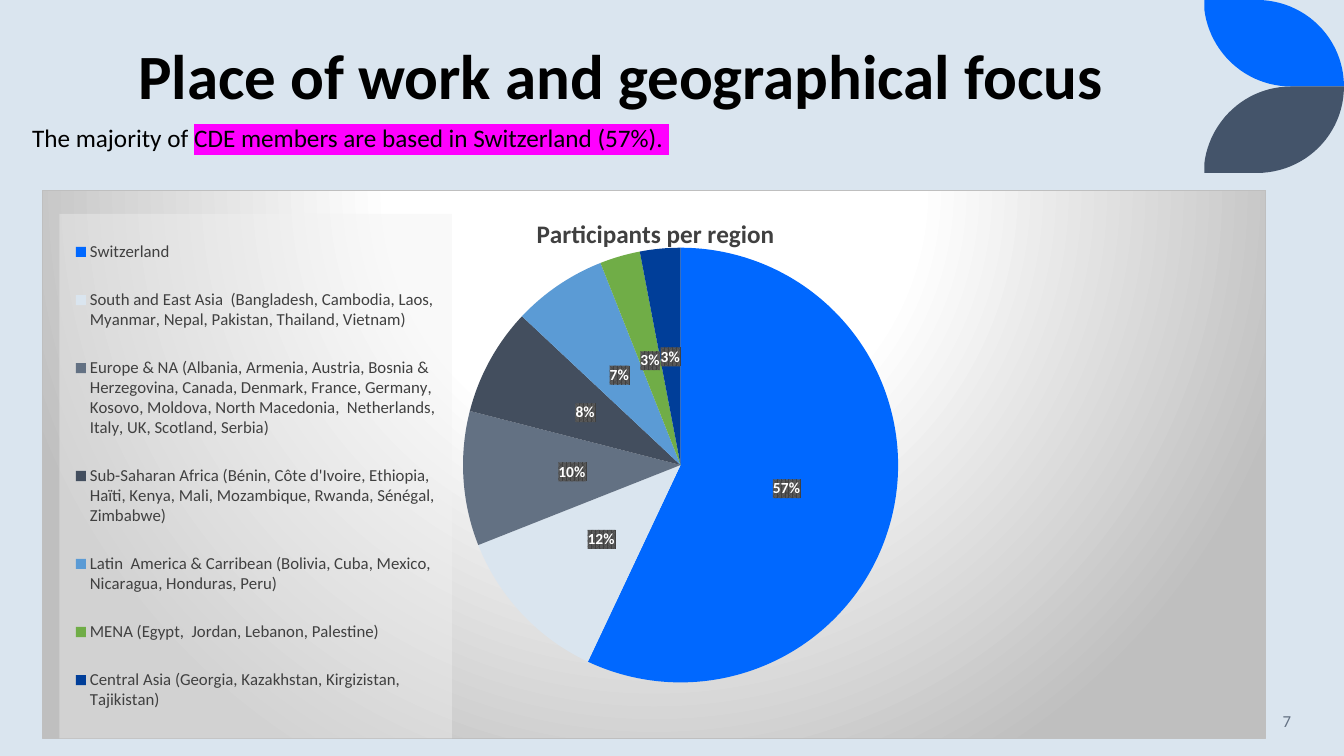
from lxml import etree
from pptx import Presentation
from pptx.chart.data import CategoryChartData
from pptx.dml.color import RGBColor
from pptx.enum import chart as ch, text
from pptx.oxml import parse_xml
from pptx.oxml.ns import nsdecls, qn
from pptx.util import Cm, Pt

FONT = "Calibri"
BLACK = RGBColor(0x00, 0x00, 0x00)
WHITE = RGBColor(0xFF, 0xFF, 0xFF)
PALE = RGBColor(0xDA, 0xE5, 0xEF)
BLUE = RGBColor(0x00, 0x68, 0xFF)
SLATE = RGBColor(0x44, 0x54, 0x6A)
GREY_BLUE = RGBColor(0x63, 0x71, 0x83)
DARK_BLUE_GREY = RGBColor(0x43, 0x4E, 0x5E)
SKY = RGBColor(0x5B, 0x9B, 0xD5)
GREEN = RGBColor(0x70, 0xAD, 0x47)
NAVY = RGBColor(0x00, 0x3E, 0x99)
DARK_GREY = RGBColor(0x40, 0x40, 0x40)
MAGENTA = RGBColor(0xFF, 0x00, 0xFF)

REGIONS = [
    ("Switzerland", 57, BLUE),
    ("South and East Asia  (Bangladesh, Cambodia, Laos, Myanmar, Nepal, "
     "Pakistan, Thailand, Vietnam)", 12, PALE),
    ("Europe & NA (Albania, Armenia, Austria, Bosnia & Herzegovina, Canada, "
     "Denmark, France, Germany, Kosovo, Moldova, North Macedonia,  "
     "Netherlands, Italy, UK, Scotland, Serbia)", 10, GREY_BLUE),
    ("Sub-Saharan Africa (Bénin, Côte d'Ivoire, Ethiopia, Haïti, Kenya, Mali, "
     "Mozambique, Rwanda, Sénégal, Zimbabwe)", 8, DARK_BLUE_GREY),
    ("Latin  America & Carribean (Bolivia, Cuba, Mexico, Nicaragua, Honduras, "
     "Peru)", 7, SKY),
    ("MENA (Egypt,  Jordan, Lebanon, Palestine)", 3, GREEN),
    ("Central Asia (Georgia, Kazakhstan, Kirgizistan, Tajikistan)", 3, NAVY),
]

prs = Presentation()
prs.slide_width, prs.slide_height = Cm(33.87), Cm(19.05)
s = prs.slides.add_slide(prs.slide_layouts[6])
s.background.fill.solid()
s.background.fill.fore_color.rgb = PALE


def add_text(box, runs, size, color, bold=False, anchor=text.MSO_ANCHOR.TOP):
    tf = s.shapes.add_textbox(*(Cm(v) for v in box)).text_frame
    tf.word_wrap = True
    tf.vertical_anchor = anchor
    p = tf.paragraphs[0]
    for words in runs:
        r = p.add_run()
        r.text = words
        r.font.name, r.font.size, r.font.bold = FONT, Pt(size), bold
        r.font.color.rgb = color
    return p


def layout(x, y, w=None, h=None, target=""):
    parts = [("layoutTarget", target)] if target else []
    parts += [("xMode", "edge"), ("yMode", "edge"), ("x", x), ("y", y)]
    parts += [("w", w), ("h", h)] if w else []
    inner = "".join(f'<c:{tag} val="{val}"/>' for tag, val in parts)
    return parse_xml(f'<c:layout {nsdecls("c")}><c:manualLayout>{inner}'
                     '</c:manualLayout></c:layout>')


# Corner leaves: the lower one mirrors the upper one
CURVES = [
    [(31.67, 0), (32.89, 0), (33.87, 0.97), (33.87, 2.18)],
    [(32.54, 2.18), (31.4, 2.18), (30.48, 1.32), (30.35, 0.23)],
]
STEPS = 24
outline = [(30.35, 0)]
for a, b, c, d in CURVES:
    for i in range(STEPS + 1):
        t = i / STEPS
        weights = ((1 - t) ** 3, 3 * t * (1 - t) ** 2, 3 * t * t * (1 - t), t ** 3)
        outline.append(tuple(sum(w * pt[k] for w, pt in zip(weights, (a, b, c, d)))
                             for k in (0, 1)))
for color, base, sign in ((BLUE, 0, 1), (SLATE, 4.36, -1)):
    points = [(Cm(x), Cm(base + sign * y)) for x, y in outline]
    builder = s.shapes.build_freeform(*points[0])
    builder.add_line_segments(points[1:], close=True)
    sp = builder.convert_to_shape()
    sp.shadow.inherit = False
    sp.fill.solid()
    sp.fill.fore_color.rgb = color
    sp.line.fill.background()

# Title and page number
p = add_text((3.23, -1.4, 27.15, 4.37), ["Place of work and geographical focus"],
             45, BLACK, True, text.MSO_ANCHOR.BOTTOM)
p.line_spacing = 0.9
p = add_text((28.19, 17.65, 4.6, 1.02), ["7"], 12, GREY_BLUE,
             anchor=text.MSO_ANCHOR.MIDDLE)
p.alignment = text.PP_ALIGN.RIGHT

# Pie chart
data = CategoryChartData()
data.categories = [name for name, _, _ in REGIONS]
data.add_series("Series 1", [value for _, value, _ in REGIONS])
chart = s.shapes.add_chart(ch.XL_CHART_TYPE.PIE, Cm(1.07), Cm(4.78), Cm(30.84),
                           Cm(13.84), data).chart
chart.font.name, chart.font.size = FONT, Pt(10)
chart.font.color.rgb = BLACK
plot = chart.plots[0]
plot.vary_by_categories = True
series = plot.series[0]
for i, (_, _, color) in enumerate(REGIONS):
    fill = series.points[i].format.fill
    fill.solid()
    fill.fore_color.rgb = color

# Chart title
r = chart.chart_title.text_frame.paragraphs[0].add_run()
r.text = "Participants per region"
r.font.name, r.font.size, r.font.bold = FONT, Pt(18), True
r.font.color.rgb = DARK_GREY

# Percent labels on a hatched ground
labels = series.data_labels
labels.show_percentage, labels.show_value = True, False
labels.number_format, labels.number_format_is_linked = "0%", False
labels.position = ch.XL_LABEL_POSITION.CENTER
labels.font.name, labels.font.size, labels.font.bold = FONT, Pt(11), True
labels.font.color.rgb = WHITE
labels_xml = series.format and chart.element.find(".//" + qn("c:dLbls"))
labels_xml.find(qn("c:txPr")).addprevious(parse_xml(
    f'<c:spPr {nsdecls("c", "a")}><a:pattFill prst="pct75">'
    f'<a:fgClr><a:srgbClr val="{DARK_GREY}"/></a:fgClr>'
    '<a:bgClr><a:srgbClr val="595959"/></a:bgClr></a:pattFill></c:spPr>'))

# Legend on a translucent panel
chart.has_legend = True
legend = chart.legend
legend.position = ch.XL_LEGEND_POSITION.RIGHT
legend.include_in_layout = False
legend.font.name, legend.font.size = FONT, Pt(12)
legend.font.color.rgb = DARK_GREY
chart_xml = chart.element.find(qn("c:chart"))
legend_xml = chart_xml.find(qn("c:legend"))
legend_xml.find(qn("c:txPr")).addprevious(parse_xml(
    f'<c:spPr {nsdecls("c", "a")}><a:solidFill><a:srgbClr val="F2F2F2">'
    '<a:alpha val="39000"/></a:srgbClr></a:solidFill></c:spPr>'))

# Places of the title, pie and legend inside the chart
title_xml, plot_xml = (chart_xml.find(qn(tag)) for tag in ("c:title", "c:plotArea"))
for parent in (title_xml, plot_xml, legend_xml):
    for old in parent.findall(qn("c:layout")):
        parent.remove(old)
title_xml.find(qn("c:tx")).addnext(layout(0.4, 0.04))
plot_xml.insert(0, layout(0.215, 0.105, 0.613, 0.793, "inner"))
legend_xml.find(qn("c:legendPos")).addnext(layout(0.0135, 0.043, 0.321, 0.957))

# Chart ground: white glow fading to grey
chart_xml.addnext(parse_xml(
    f'<c:spPr {nsdecls("c", "a")}><a:gradFill><a:gsLst>'
    + "".join(f'<a:gs pos="{pos}000"><a:srgbClr val="{rgb}"/></a:gs>'
              for pos, rgb in ((0, "FFFFFF"), (39, "FFFFFF"), (100, "BFBFBF")))
    + '</a:gsLst><a:path path="circle"><a:fillToRect l="50000" t="-80000" '
    'r="50000" b="180000"/></a:path></a:gradFill><a:ln w="9525"><a:solidFill>'
    '<a:srgbClr val="BFBFBF"/></a:solidFill></a:ln></c:spPr>'))

# Key message with highlighted finding
p = add_text((0.56, 2.97, 30.38, 1.02),
             ["The majority of ", "CDE members are based in Switzerland (57%). "],
             18, BLACK)
highlight = parse_xml(f'<a:highlight {nsdecls("a")}/>')
etree.SubElement(highlight, qn("a:srgbClr"), val=str(MAGENTA))
p.runs[1].font.color.rgb = BLACK
p.runs[1].font._element.find(qn("a:solidFill")).addnext(highlight)

prs.save("out.pptx")
